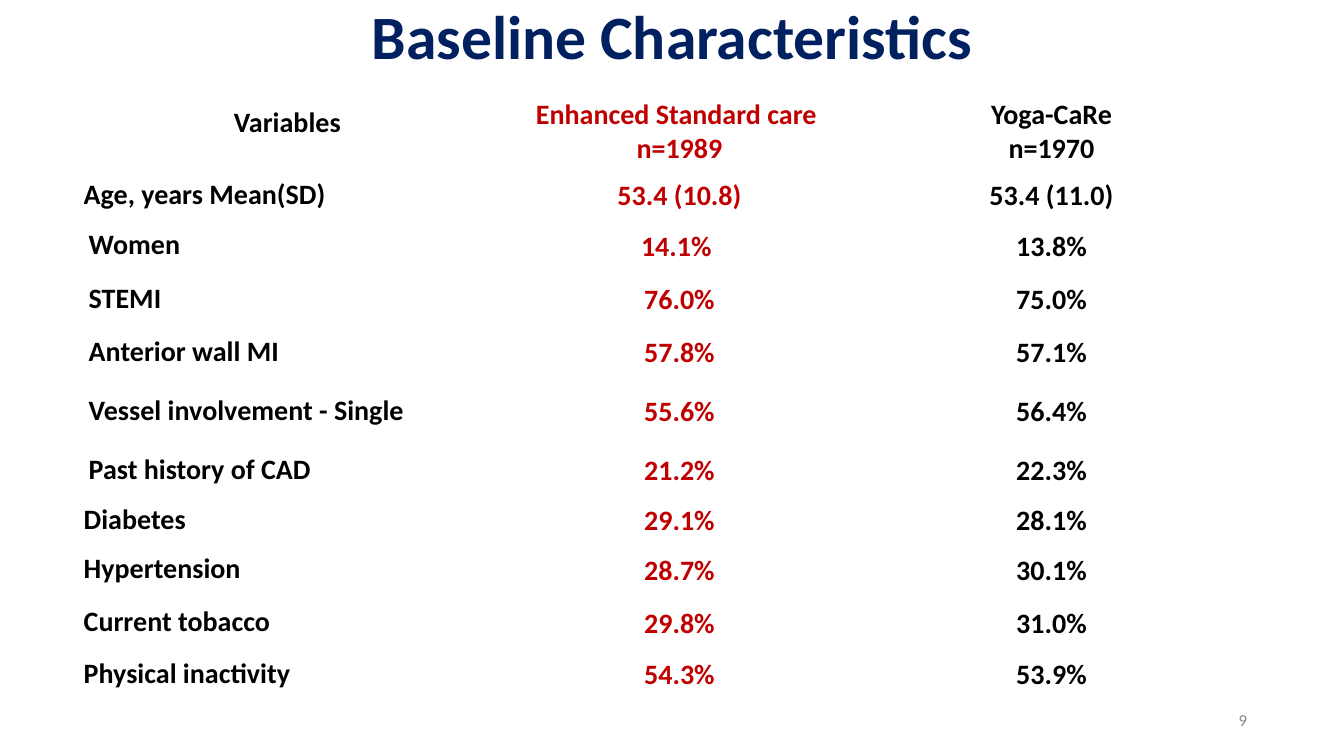
from dataclasses import dataclass

import pptx
import pptx.dml.color
import pptx.enum.text
import pptx.util

Inches = pptx.util.Inches
ALIGN = pptx.enum.text.PP_ALIGN
ANCHOR = pptx.enum.text.MSO_ANCHOR

COLORS = {"title": "002060", "standard": "C00000", "text": "000000", "number": "888888"}
COLUMN_WIDTHS = (4.04, 3.74, 3.64)
COLUMN_COLORS = (COLORS["text"], COLORS["standard"], COLORS["text"])
HEADER_HEIGHT = 0.96
HEADINGS = ("Variables", "Enhanced Standard care \nn=1989", "Yoga-CaRe\nn=1970")
SIDES = ("margin_left", "margin_top", "margin_right", "margin_bottom")


@dataclass
class Characteristic:
    label: str
    standard: str
    yoga: str
    height: float
    label_inset: float = 0
    value_inset: float = 0


CHARACTERISTICS = (
    Characteristic("Age, years Mean(SD)", "53.4 (10.8)", "53.4 (11.0)", 0.47),
    Characteristic("Women", "14.1% ", "13.8%", 0.53, 0.05),
    Characteristic("STEMI", "76.0%", "75.0%", 0.53, 0.05, 0.01),
    Characteristic("Anterior wall MI", "57.8%", "57.1%", 0.53, 0.05),
    Characteristic("Vessel involvement - Single", "55.6%", "56.4%", 0.64, 0.05, 0.01),
    Characteristic("Past history of CAD", "21.2%", "22.3%", 0.53, 0.05),
    Characteristic("Diabetes", "29.1%", "28.1%", 0.46),
    Characteristic("Hypertension", "28.7%", "30.1%", 0.52),
    Characteristic("Current tobacco", "29.8%", "31.0%", 0.53, 0, 0.01),
    Characteristic("Physical inactivity", "54.3%", "53.9%", 0.50, 0, 0.01),
)


def apply_format(target: object, values: dict) -> None:
    for name, value in values.items():
        setattr(target, name, value)


def set_insets(holder: object, inset: float) -> None:
    apply_format(holder, dict.fromkeys(SIDES, Inches(inset)))


def write_text(frame: pptx.text.text.TextFrame, text: str, color: str, size: float,
               bold: bool, **paragraph_format: object) -> None:
    """Fill the frame with one paragraph per line of text."""
    frame.text = text
    for paragraph in frame.paragraphs:
        apply_format(paragraph, paragraph_format)
        for run in paragraph.runs:
            apply_format(run.font, {"name": "Calibri", "size": pptx.util.Pt(size), "bold": bold})
            run.font.color.rgb = pptx.dml.color.RGBColor.from_string(color)


def write_cell(cell: pptx.table._Cell, text: str, color: str, inset: float,
               anchor: ANCHOR = ANCHOR.MIDDLE, **paragraph_format: object) -> None:
    cell.fill.background()
    cell.vertical_anchor = anchor
    set_insets(cell, inset)
    write_text(cell.text_frame, text, color, 20, True, **paragraph_format)


def add_title(slide: pptx.slide.Slide) -> None:
    title = slide.shapes.title
    apply_format(title, {"left": Inches(0.92), "top": Inches(-0.33),
                         "width": Inches(11.5), "height": Inches(1.45)})
    title.text_frame.vertical_anchor = ANCHOR.MIDDLE
    set_insets(title.text_frame, 0.05)
    write_text(title.text_frame, "Baseline Characteristics", COLORS["title"], 44, True,
               alignment=ALIGN.CENTER, line_spacing=0.9)


def add_baseline_table(slide: pptx.slide.Slide) -> None:
    heights = (HEADER_HEIGHT, *(item.height for item in CHARACTERISTICS))
    table = slide.shapes.add_table(
        len(heights), len(COLUMN_WIDTHS), Inches(0.83), Inches(0.74),
        Inches(sum(COLUMN_WIDTHS)), Inches(sum(heights))).table
    apply_format(table, {"first_row": False, "horz_banding": False})
    for column, width in zip(table.columns, COLUMN_WIDTHS):
        column.width = Inches(width)
    for row, height in zip(table.rows, heights):
        row.height = Inches(height)

    for column, (heading, color) in enumerate(zip(HEADINGS, COLUMN_COLORS)):
        anchor = ANCHOR.BOTTOM if column else ANCHOR.MIDDLE
        write_cell(table.cell(0, column), heading, color, 0.05, anchor, alignment=ALIGN.CENTER)
    for row, item in enumerate(CHARACTERISTICS, start=1):
        write_cell(table.cell(row, 0), item.label, COLUMN_COLORS[0], item.label_inset,
                   alignment=ALIGN.LEFT)
        for column, value in enumerate((item.standard, item.yoga), start=1):
            write_cell(table.cell(row, column), value, COLUMN_COLORS[column], item.value_inset,
                       alignment=ALIGN.CENTER, line_spacing=1.07)


def add_page_number(slide: pptx.slide.Slide) -> None:
    frame = slide.shapes.add_textbox(
        Inches(12.22), Inches(7), Inches(0.2), Inches(0.29)).text_frame
    apply_format(frame, {"word_wrap": False, "vertical_anchor": ANCHOR.MIDDLE,
                         "auto_size": pptx.enum.text.MSO_AUTO_SIZE.SHAPE_TO_FIT_TEXT})
    set_insets(frame, 0.05)
    write_text(frame, "9", COLORS["number"], 12, False, alignment=ALIGN.RIGHT)


def main() -> None:
    presentation = pptx.Presentation()
    apply_format(presentation, {"slide_width": Inches(13.33), "slide_height": Inches(7.5)})
    slide = presentation.slides.add_slide(presentation.slide_layouts.get_by_name("Title Only"))
    add_title(slide)
    add_page_number(slide)
    add_baseline_table(slide)
    presentation.save("out.pptx")


if __name__ == "__main__":
    main()
